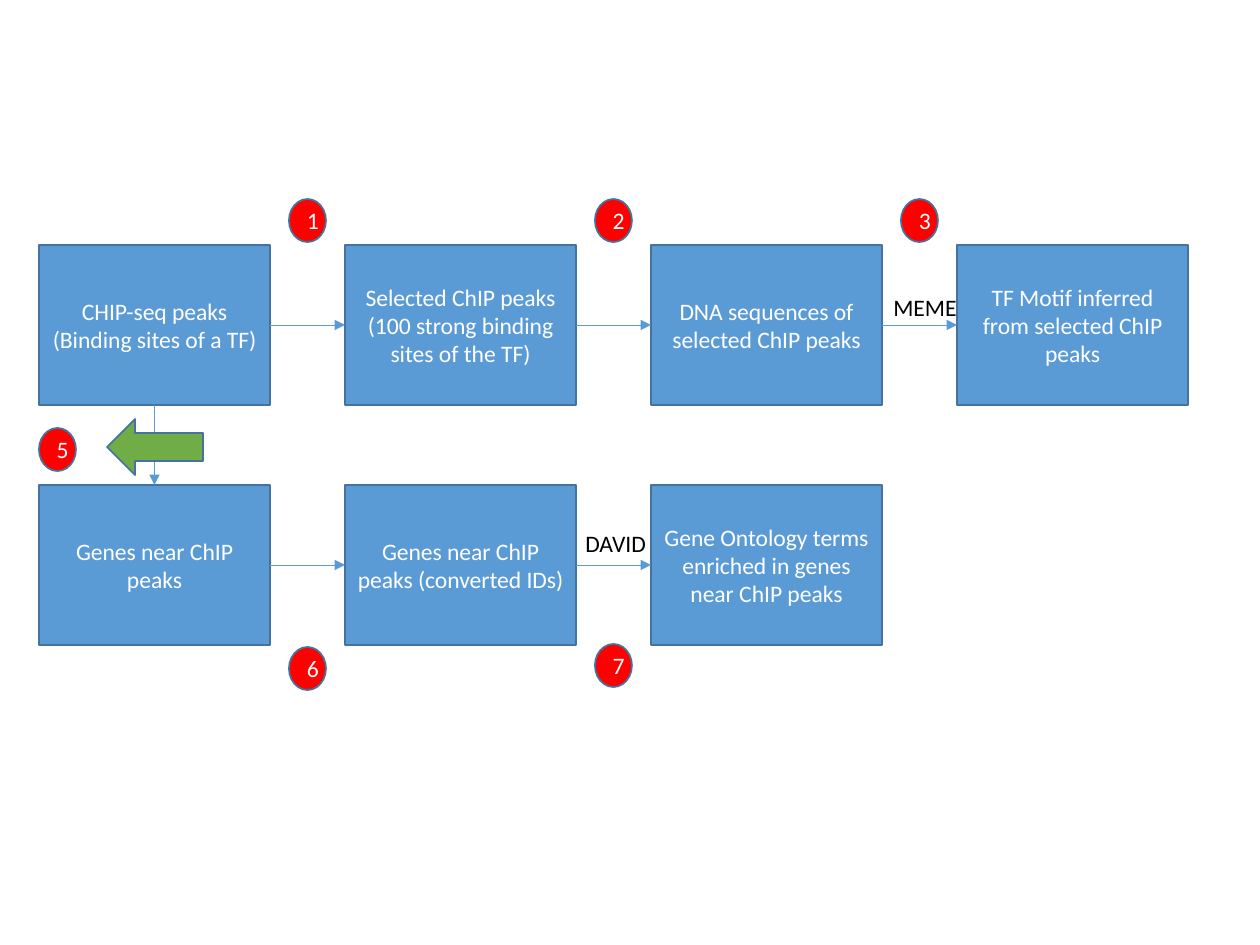
from lxml.etree import SubElement
from pptx import Presentation
from pptx.dml.color import RGBColor
from pptx.enum.shapes import MSO_CONNECTOR, MSO_SHAPE
from pptx.enum.text import MSO_ANCHOR, MSO_AUTO_SIZE, PP_ALIGN
from pptx.oxml.ns import qn
from pptx.util import Inches, Pt

SCALE = Inches(1) / 126
LEFT, STEP = 39, 306
WIDE, HIGH = 231, 160
ROWS = [
    (245, ["CHIP-seq peaks (Binding sites of a TF)",
           "Selected ChIP peaks (100 strong binding sites of the TF)",
           "DNA sequences of selected ChIP peaks",
           "TF Motif inferred from selected ChIP peaks"]),
    (485, ["Genes near ChIP peaks",
           "Genes near ChIP peaks (converted IDs)",
           "Gene Ontology terms enriched in genes near ChIP peaks"]),
]
MARKS = [("1", 289, 199), ("2", 595, 199), ("3", 901, 199),
         ("5", 39, 428), ("6", 289, 647), ("7", 595, 644)]
TOOLS = [("MEME", 881, 287, 89), ("DAVID", 573, 523, 86)]


def px(*nums):
    return [round(num * SCALE) for num in nums]


def tint(color, code):
    color.rgb = RGBColor.from_string(code)


def write(shape, text, code):
    run = shape.text_frame.paragraphs[0].add_run()
    run.text = text
    run.font.name = "Calibri"
    run.font.size = Pt(13.5)
    tint(run.font.color, code)


def draw(slide, kind, place, code, text=""):
    shape = slide.shapes.add_shape(kind, *px(*place))
    shape.shadow.inherit = False
    shape.fill.solid()
    tint(shape.fill.fore_color, code)
    tint(shape.line.color, "43739E")
    shape.line.width = Pt(1)
    if text:
        frame = shape.text_frame
        frame.word_wrap = True
        frame.vertical_anchor = MSO_ANCHOR.MIDDLE
        frame.paragraphs[0].alignment = PP_ALIGN.CENTER
        write(shape, text, "FFFFFF")
    return shape


def link(slide, start, out, end, into):
    line = slide.shapes.add_connector(MSO_CONNECTOR.STRAIGHT, 0, 0, 0, 0)
    line.begin_connect(start, out)
    line.end_connect(end, into)
    tint(line.line.color, "5B9BD5")
    line.line.width = Pt(0.5)
    SubElement(line.line._get_or_add_ln(), qn("a:tailEnd"), type="triangle")
    SubElement(line._element.spPr, qn("a:effectLst"))


def label(slide, text, place):
    box = slide.shapes.add_textbox(*px(*place))
    box.text_frame.word_wrap = False
    box.text_frame.auto_size = MSO_AUTO_SIZE.SHAPE_TO_FIT_TEXT
    write(box, text, "000000")


def main():
    deck = Presentation()
    deck.slide_width, deck.slide_height = Inches(10), Inches(7.5)
    slide = deck.slides.add_slide(deck.slide_layouts[6])

    grid = []
    for top, texts in ROWS:
        row = [draw(slide, MSO_SHAPE.RECTANGLE,
                    (LEFT + STEP * col, top, WIDE, HIGH), "5B9BD5", text)
               for col, text in enumerate(texts)]
        for start, end in zip(row, row[1:]):
            link(slide, start, 3, end, 1)
        grid.append(row)
    link(slide, grid[0][0], 2, grid[1][0], 0)

    for text, left, top, wide in TOOLS:
        label(slide, text, (left, top, wide, 41))
    for text, left, top in MARKS:
        draw(slide, MSO_SHAPE.OVAL, (left, top, 37, 43), "FF0000", text)
    arrow = draw(slide, MSO_SHAPE.DOWN_ARROW, (127, 399, 56, 96), "70AD47")
    arrow.rotation = 90

    deck.save("out.pptx")


if __name__ == "__main__":
    main()
